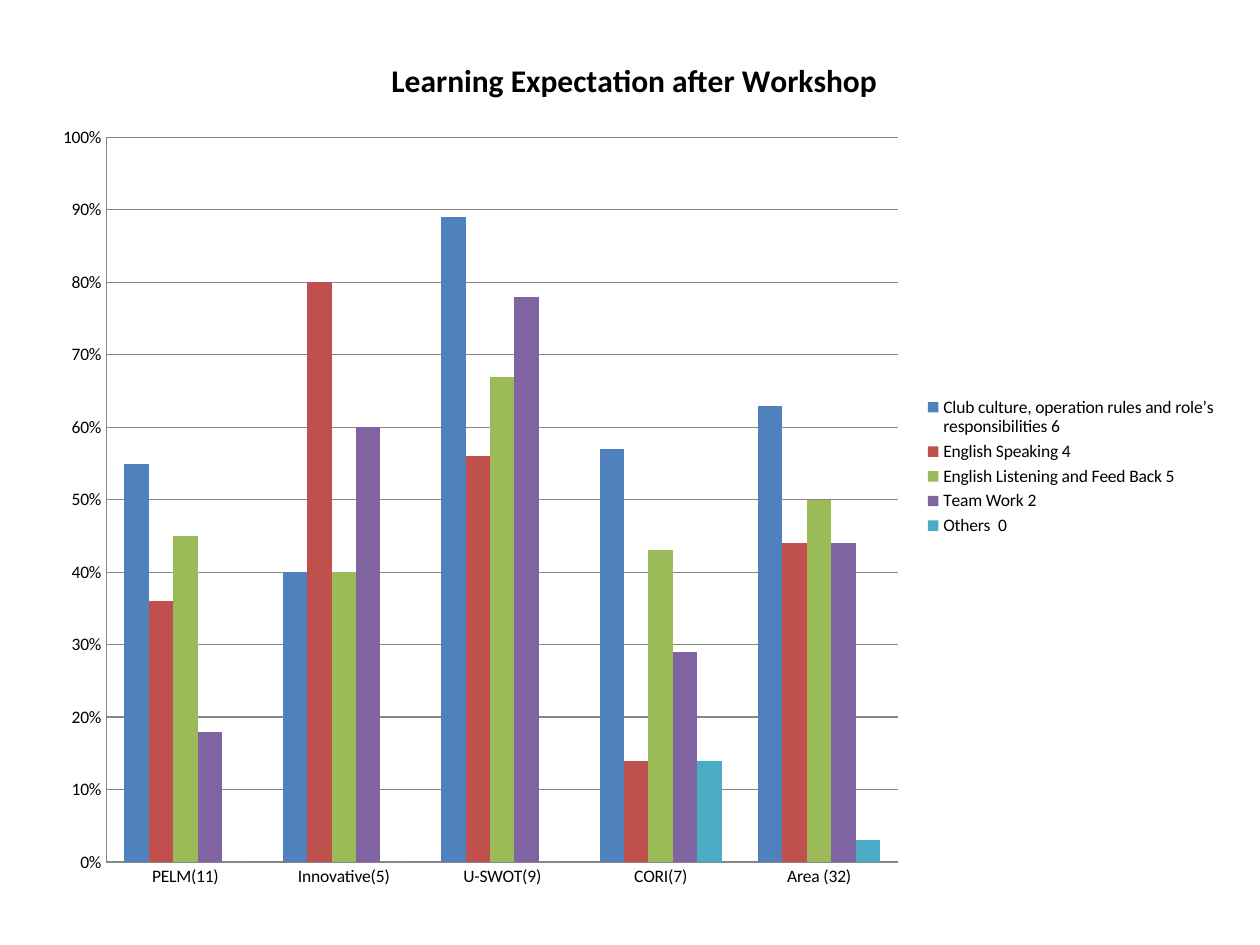
from pptx import Presentation
from pptx.chart.data import CategoryChartData
from pptx.dml.color import RGBColor
from pptx.enum.chart import XL_CHART_TYPE, XL_LEGEND_POSITION, XL_TICK_MARK
from pptx.util import Cm, Pt

COLUMN = XL_CHART_TYPE.COLUMN_CLUSTERED
RIGHT = XL_LEGEND_POSITION.RIGHT
NO_TICK = XL_TICK_MARK.NONE

FONT = "Calibri"
COLORS = {
    "text": "000000",
    "line": "868686",
    "blue": "4F81BD",
    "red": "C0504D",
    "green": "9BBB59",
    "purple": "8064A2",
    "teal": "4BACC6",
}
CLUBS = ["PELM(11)", "Innovative(5)", "U-SWOT(9)", "CORI(7)", "Area (32)"]
GOALS = [
    ("Club culture, operation rules and role’s responsibilities 6", "blue",
     (0.55, 0.4, 0.89, 0.57, 0.63)),
    ("English Speaking 4", "red", (0.36, 0.8, 0.56, 0.14, 0.44)),
    ("English Listening and Feed Back 5", "green", (0.45, 0.4, 0.67, 0.43, 0.5)),
    ("Team Work 2", "purple", (0.18, 0.6, 0.78, 0.29, 0.44)),
    ("Others  0", "teal", (0, 0, 0, 0.14, 0.03)),
]


def color(name):
    return RGBColor.from_string(COLORS[name])


def style_font(font, size=10, bold=False, fill="text"):
    font.name = FONT
    font.size = Pt(size)
    font.bold = bold
    font.color.rgb = color(fill)


def put_text(frame, text, **style):
    run = frame.paragraphs[0].add_run()
    run.text = text
    style_font(run.font, **style)


def style_line(line):
    line.color.rgb = color("line")
    line.width = Pt(0.75)


def style_axis(axis):
    axis.major_tick_mark = NO_TICK
    axis.minor_tick_mark = NO_TICK
    style_line(axis.format.line)
    style_font(axis.tick_labels.font)


def style_scale(axis):
    style_axis(axis)
    axis.minimum_scale = 0
    axis.maximum_scale = 1
    axis.major_unit = 0.1
    axis.has_major_gridlines = True
    style_line(axis.major_gridlines.format.line)
    axis.tick_labels.number_format = "0%"
    axis.tick_labels.number_format_is_linked = False


def style_bars(plot):
    plot.gap_width = 150
    plot.overlap = 0
    plot.vary_by_categories = False
    for bars, (_, fill, _) in zip(plot.series, GOALS):
        bars.format.fill.solid()
        bars.format.fill.fore_color.rgb = color(fill)
        bars.invert_if_negative = False


def add_legend(chart):
    chart.has_legend = True
    chart.legend.position = RIGHT
    chart.legend.include_in_layout = False
    style_font(chart.legend.font)


def add_goals(slide):
    data = CategoryChartData(number_format="0%")
    data.categories = CLUBS
    for name, _, values in GOALS:
        data.add_series(name, values)
    frame = slide.shapes.add_chart(
        COLUMN, Cm(0.79), Cm(0.58), Cm(24), Cm(17.65), data)
    chart = frame.chart
    style_font(chart.font)
    chart.has_title = True
    chart.chart_title.include_in_layout = False
    put_text(chart.chart_title.text_frame,
             "Learning Expectation after Workshop", size=18, bold=True)
    style_axis(chart.category_axis)
    style_scale(chart.value_axis)
    style_bars(chart.plots[0])
    add_legend(chart)


def main():
    deck = Presentation()
    deck.slide_width = Cm(25.4)
    deck.slide_height = Cm(19.05)
    slide = deck.slides.add_slide(deck.slide_layouts[6])
    add_goals(slide)
    deck.save("out.pptx")


if __name__ == "__main__":
    main()
